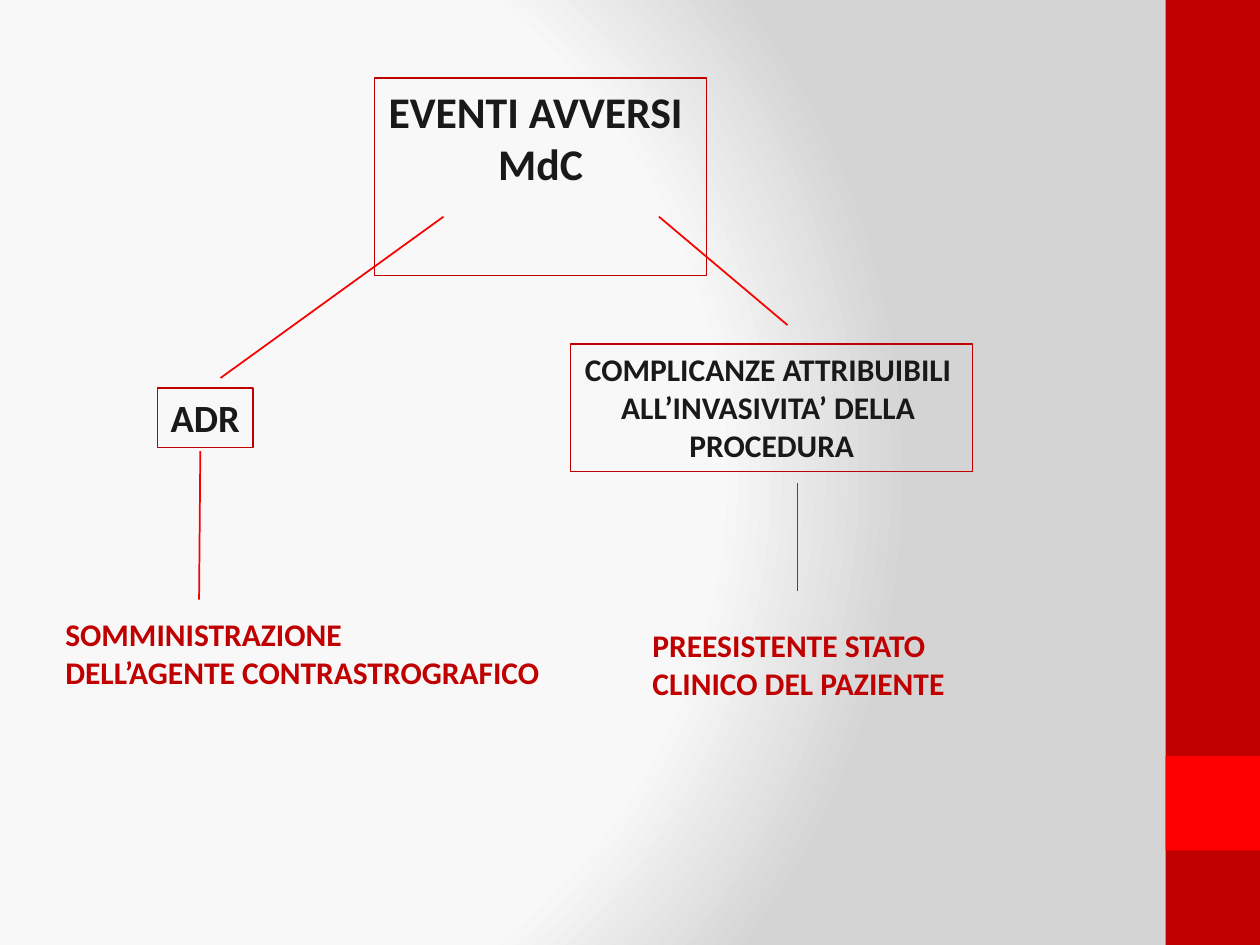
import pptx
import pptx.util
import pptx.dml.color
import pptx.enum.shapes
import pptx.enum.text
import pptx.oxml
import pptx.oxml.ns

Inches = pptx.util.Inches
Pt = pptx.util.Pt
ALIGN = pptx.enum.text.PP_ALIGN
COLORS = {"text": "191919", "dark_red": "C00000", "red": "FF0000", "line": "F90000"}
GRADIENT = [(0, "F9F9F9"), (75, "F8F8F8"), (100, "D4D4D4")]
FOCUS = {"l": 20, "t": 50, "r": 100, "b": 50}

BARS = [((9.25, 0, 0.75, 7.5), "dark_red"), ((9.25, 6, 0.75, 0.75), "red")]
TITLE = ((2.97, 0.62, 2.64, 0.94), 25, ["EVENTI AVVERSI ", "MdC"])
BOXES = [
    ((1.25, 3.08, 0.76, 0.47), 22, ["ADR"]),
    ((4.53, 2.73, 3.19, 1.01), 18,
     ["COMPLICANZE ATTRIBUIBILI ", "ALL’INVASIVITA’ DELLA ", "PROCEDURA"]),
]
CAUSES = [
    ((0.42, 4.83, 4, 0.71), 18, ["SOMMINISTRAZIONE", "DELL’AGENTE CONTRASTROGRAFICO"]),
    ((5.08, 4.92, 2.54, 0.71), 18, ["PREESISTENTE STATO", "CLINICO DEL PAZIENTE"]),
]
LINES = [
    (1.59, 3.58, 1.58, 4.76),
    (6.33, 3.83, 6.33, 4.69),
    (3.52, 1.72, 1.75, 3),
    (5.23, 1.72, 6.25, 2.58),
]


def rgb(name):
    return pptx.dml.color.RGBColor.from_string(COLORS[name])


def paint_background(s):
    s.background.fill.gradient()
    old = s._element.find(".//" + pptx.oxml.ns.qn("a:gradFill"))
    stops = "".join(
        f'<a:gs pos="{pos * 1000}"><a:srgbClr val="{color}"/></a:gs>' for pos, color in GRADIENT)
    focus = " ".join(f'{side}="{value * 1000}"' for side, value in FOCUS.items())
    new = pptx.oxml.parse_xml(
        f'<a:gradFill {pptx.oxml.ns.nsdecls("a")} rotWithShape="1"><a:gsLst>{stops}</a:gsLst>'
        f'<a:path path="circle"><a:fillToRect {focus}/></a:path></a:gradFill>')
    old.getparent().replace(old, new)


def add_bar(s, box, color):
    sp = s.shapes.add_shape(pptx.enum.shapes.MSO_SHAPE.RECTANGLE, *map(Inches, box))
    sp.shadow.inherit = False
    sp.fill.solid()
    sp.fill.fore_color.rgb = rgb(color)
    sp.line.fill.background()


def write(sp, box, size, lines, color, align):
    sp.left, sp.top, sp.width, sp.height = map(Inches, box)
    tf = sp.text_frame
    tf.word_wrap = False
    tf.auto_size = pptx.enum.text.MSO_AUTO_SIZE.SHAPE_TO_FIT_TEXT
    tf.vertical_anchor = pptx.enum.text.MSO_ANCHOR.TOP
    for i, line in enumerate(lines):
        p = tf.add_paragraph() if i else tf.paragraphs[0]
        p.alignment = align
        r = p.add_run()
        r.text = line
        r.font.name = "Calibri"
        r.font.size = Pt(size)
        r.font.bold = True
        r.font.color.rgb = rgb(color)


def write_framed(sp, box, size, lines):
    write(sp, box, size, lines, "text", ALIGN.CENTER)
    sp.line.color.rgb = rgb("dark_red")
    sp.line.width = Pt(0.75)


def add_line(s, ends):
    cxn = s.shapes.add_connector(
        pptx.enum.shapes.MSO_CONNECTOR.STRAIGHT, *map(Inches, ends))
    cxn.line.color.rgb = rgb("line")
    cxn.line.width = Pt(1)
    cxn._element.spPr.append(
        pptx.oxml.parse_xml(f'<a:effectLst {pptx.oxml.ns.nsdecls("a")}/>'))


def main():
    """Build the slide with the tree of contrast agent adverse events."""
    prs = pptx.Presentation()
    prs.slide_width, prs.slide_height = Inches(10), Inches(7.5)
    s = prs.slides.add_slide(prs.slide_layouts.get_by_name("Title Only"))
    paint_background(s)
    for bar in BARS:
        add_bar(s, *bar)
    write_framed(s.shapes.title, *TITLE)
    for box, size, lines in BOXES:
        write_framed(s.shapes.add_textbox(*map(Inches, box)), box, size, lines)
    for box, size, lines in CAUSES:
        sp = s.shapes.add_textbox(*map(Inches, box))
        write(sp, box, size, lines, "dark_red", ALIGN.LEFT)
    for ends in LINES:
        add_line(s, ends)
    prs.save("out.pptx")


if __name__ == "__main__":
    main()
